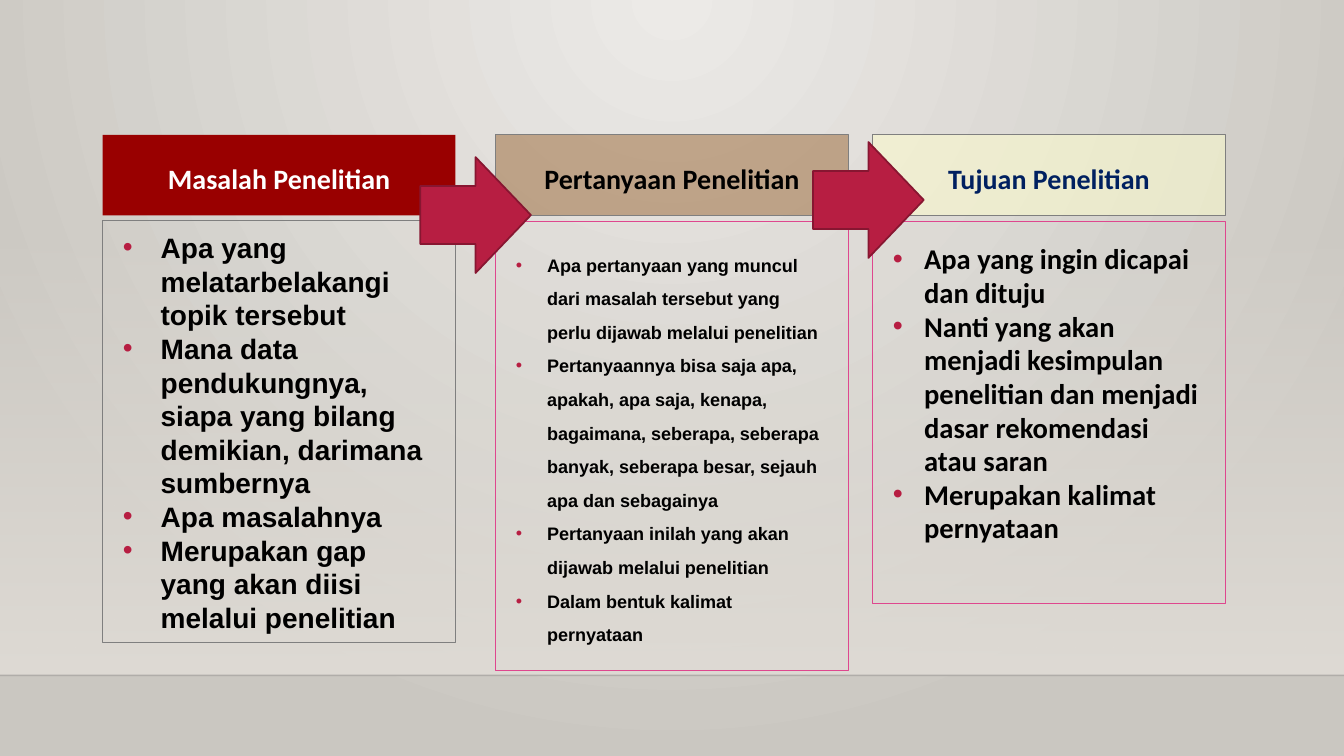
from dataclasses import dataclass

from pptx import Presentation
from pptx.dml.color import RGBColor
from pptx.enum.shapes import MSO_CONNECTOR, MSO_SHAPE
from pptx.enum.text import MSO_ANCHOR, PP_ALIGN
from pptx.oxml.ns import qn
from pptx.oxml.xmlchemy import OxmlElement
from pptx.util import Cm, Pt

RECTANGLE = MSO_SHAPE.RECTANGLE
RIGHT_ARROW = MSO_SHAPE.RIGHT_ARROW
STRAIGHT = MSO_CONNECTOR.STRAIGHT
MIDDLE, TOP = MSO_ANCHOR.MIDDLE, MSO_ANCHOR.TOP
CENTER, LEFT = PP_ALIGN.CENTER, PP_ALIGN.LEFT


@dataclass(frozen=True)
class Theme:
    """Colours, fonts and type sizes of the slide."""
    glow: str = "ECEAE7"
    edge: str = "CAC7C1"
    wall: str = "DFDBD5"
    floor_line: str = "000001"
    accent: str = "B71E42"
    arrow_line: str = "871631"
    pink: str = "DE478E"
    grey: str = "7F7F7F"
    black: str = "000000"
    heading_font: str = "Calibri"
    text_font: str = "Arial"
    heading_size: float = 20
    small_size: float = 12.9
    large_size: float = 20.4
    line_pitch: float = 24


THEME = Theme()
SLIDE_WIDTH, SLIDE_HEIGHT = 33.87, 19.05
COLUMN_WIDTH, HEADING_TOP, HEADING_HEIGHT = 8.89, 3.4, 2.03
FLOOR_TOP = 17.02


@dataclass(frozen=True)
class Column:
    """Content and look of one heading with its list."""
    left: float
    heading: str
    heading_color: str
    fill: str
    opacity: int
    heading_line: str
    body_top: float
    body_height: float
    body_line: str
    inset_top: float
    indent: float
    font: str
    size: float
    points: tuple


COLUMNS = (
    Column(2.59, "Masalah Penelitian", "FFFFFF", "990000", 100, "",
           5.56, 10.64, THEME.grey, 0.25, 0.95,
           THEME.text_font, THEME.heading_size, (
               "Apa yang melatarbelakangi topik tersebut",
               "Mana data pendukungnya, siapa yang bilang demikian, darimana sumbernya",
               "Apa masalahnya",
               "Merupakan gap yang akan diisi melalui penelitian")),
    Column(12.49, "Pertanyaan Penelitian", "000000", "996633", 50, THEME.grey,
           5.59, 11.3, THEME.pink, 0.51, 0.79,
           THEME.text_font, THEME.small_size, (
               "Apa pertanyaan yang muncul dari masalah tersebut yang perlu dijawab melalui penelitian",
               "Pertanyaannya bisa saja apa, apakah, apa saja, kenapa, bagaimana, seberapa, "
               "seberapa banyak, seberapa besar, sejauh apa dan sebagainya",
               "Pertanyaan inilah yang akan dijawab melalui penelitian",
               "Dalam bentuk kalimat pernyataan")),
    Column(21.99, "Tujuan Penelitian", "002060", "FFFFCC", 50, THEME.grey,
           5.59, 9.61, THEME.pink, 0.51, 0.79,
           THEME.heading_font, THEME.large_size, (
               "Apa yang ingin dicapai dan dituju",
               "Nanti yang akan menjadi kesimpulan penelitian dan menjadi dasar rekomendasi atau saran",
               "Merupakan kalimat pernyataan")),
)
ARROWS = ((10.59, 3.96), (20.49, 3.58))


def append_child(parent, tag, **attributes):
    """Append an XML element with attributes and return it."""
    child = OxmlElement(tag)
    for name, value in attributes.items():
        child.set(name, str(value))
    parent.append(child)
    return child


def set_opacity(color_parent, percent):
    """Give every RGB colour below an element the same opacity."""
    for color in color_parent.iter(qn("a:srgbClr")):
        append_child(color, "a:alpha", val=percent * 1000)


def set_gradient(fill, first, last):
    """Apply a gradient of two colours."""
    fill.gradient()
    for stop, color in zip(fill.gradient_stops, (first, last)):
        stop.color.rgb = RGBColor.from_string(color)


def set_background(page):
    """Paint a round glow from the top centre of the page."""
    set_gradient(page.background.fill, THEME.glow, THEME.edge)
    linear = next(page.element.iter(qn("a:lin")))
    gradient = linear.getparent()
    gradient.remove(linear)
    circle = append_child(gradient, "a:path", path="circle")
    append_child(circle, "a:fillToRect", l=43000, t=0, r=43000, b=100000)


def add_box(page, kind, left, top, width, height, fill="", line="", weight=0.75):
    """Add a preset shape with an optional fill and outline."""
    box = page.shapes.add_shape(kind, Cm(left), Cm(top), Cm(width), Cm(height))
    box.shadow.inherit = False
    if fill:
        box.fill.solid()
        box.fill.fore_color.rgb = RGBColor.from_string(fill)
    else:
        box.fill.background()
    if line:
        box.line.color.rgb = RGBColor.from_string(line)
        box.line.width = Pt(weight)
    else:
        box.line.fill.background()
    return box


def add_room(page):
    """Add the wall that fades in downwards and the floor line."""
    wall_top = 5.61
    wall = add_box(page, RECTANGLE, 0, wall_top, SLIDE_WIDTH, FLOOR_TOP - wall_top)
    set_gradient(wall.fill, THEME.wall, THEME.wall)
    wall.fill.gradient_angle = 270
    set_opacity(next(wall.element.iter(qn("a:gs"))), 0)
    floor = page.shapes.add_connector(
        STRAIGHT, Cm(0), Cm(FLOOR_TOP), Cm(SLIDE_WIDTH), Cm(FLOOR_TOP))
    floor.line.color.rgb = RGBColor.from_string(THEME.floor_line)
    floor.line.width = Pt(1)
    set_opacity(floor.element.spPr, 20)
    append_child(floor.element.spPr, "a:effectLst")


def style_font(paragraph, name, size, color):
    """Set the bold type of a paragraph's runs."""
    for span in paragraph.runs:
        span.font.name = name
        span.font.size = Pt(size)
        span.font.bold = True
        span.font.color.rgb = RGBColor.from_string(color)


def add_heading(page, column):
    """Add the coloured heading of a column."""
    box = add_box(page, RECTANGLE, column.left, HEADING_TOP, COLUMN_WIDTH,
                  HEADING_HEIGHT, column.fill, column.heading_line)
    if column.opacity < 100:
        set_opacity(box.element.spPr.find(qn("a:solidFill")), column.opacity)
    frame = box.text_frame
    frame.word_wrap = True
    frame.vertical_anchor = MIDDLE
    frame.text = column.heading
    para = frame.paragraphs[0]
    para.alignment = CENTER
    para.line_spacing = 1.2
    style_font(para, THEME.heading_font, THEME.heading_size, column.heading_color)


def add_bullet(paragraph, indent):
    """Give a paragraph a hanging round bullet in the accent colour."""
    properties = paragraph._p.get_or_add_pPr()
    properties.set("marL", str(Cm(indent)))
    properties.set("indent", str(-Cm(indent)))
    color = append_child(properties, "a:buClr")
    append_child(color, "a:srgbClr", val=THEME.accent)
    append_child(properties, "a:buFont", typeface=THEME.text_font)
    append_child(properties, "a:buChar", char="•")


def add_points(page, column):
    """Add the outlined list below a heading."""
    box = add_box(page, RECTANGLE, column.left, column.body_top, COLUMN_WIDTH,
                  column.body_height, line=column.body_line)
    frame = box.text_frame
    frame.word_wrap = True
    frame.vertical_anchor = TOP
    frame.margin_left = frame.margin_right = Cm(0.51)
    frame.margin_top, frame.margin_bottom = Cm(column.inset_top), Cm(0.13)
    frame.text = "\n".join(column.points)
    for para in frame.paragraphs:
        add_bullet(para, column.indent)
        para.alignment = LEFT
        para.line_spacing = Pt(THEME.line_pitch)
        style_font(para, column.font, column.size, THEME.black)


def main():
    """Build and save the slide."""
    deck = Presentation()
    deck.slide_width, deck.slide_height = Cm(SLIDE_WIDTH), Cm(SLIDE_HEIGHT)
    page = deck.slides.add_slide(deck.slide_layouts[6])
    set_background(page)
    add_room(page)
    for column in COLUMNS:
        add_heading(page, column)
        add_points(page, column)
    for left, top in ARROWS:
        add_box(page, RIGHT_ARROW, left, top, 2.79, 2.92,
                THEME.accent, THEME.arrow_line, 1.25)
    deck.save("out.pptx")


if __name__ == "__main__":
    main()
